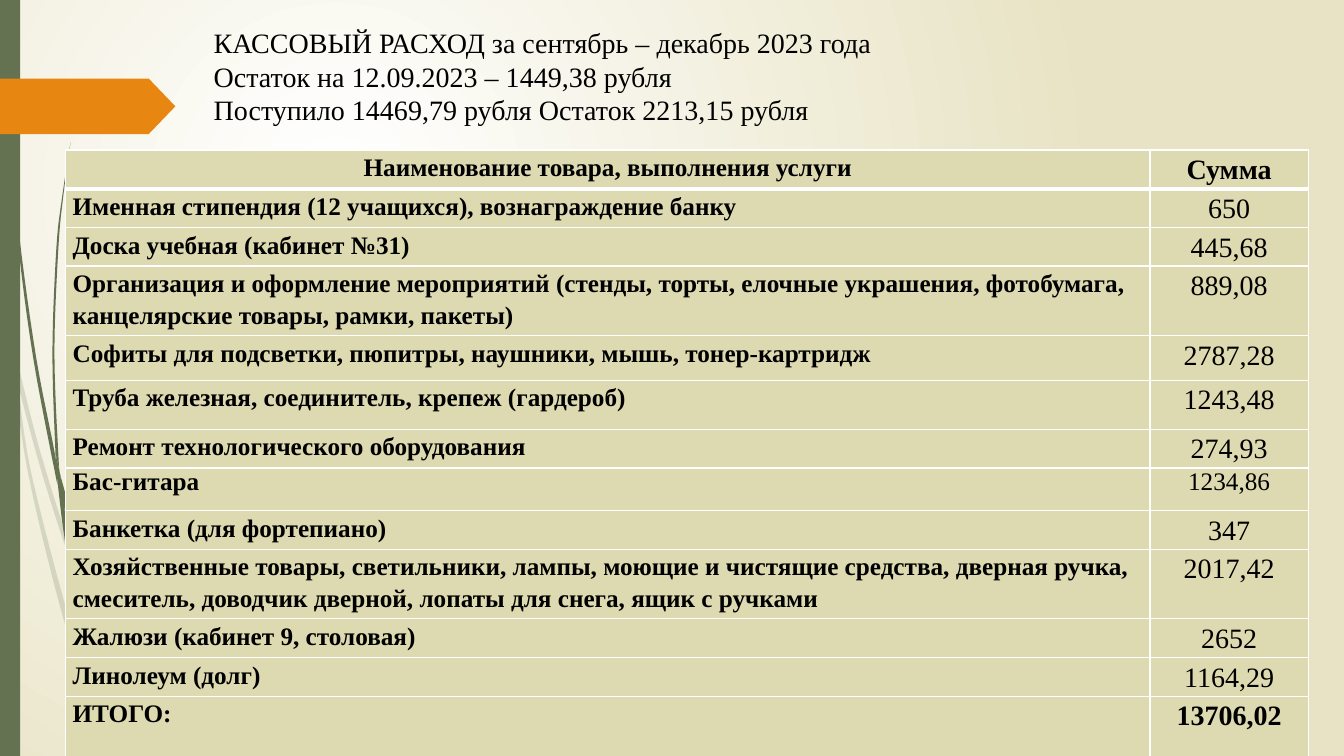
from dataclasses import dataclass

from lxml import etree
from pptx import Presentation
from pptx import util as u
from pptx.dml.color import RGBColor
from pptx.enum import shapes, text
from pptx.oxml import ns

HEADING = [
    "КАССОВЫЙ РАСХОД за сентябрь – декабрь 2023 года",
    "Остаток на 12.09.2023 – 1449,38 рубля",
    "Поступило 14469,79 рубля Остаток 2213,15 рубля",
]
EXPENSES = [
    ("Наименование товара, выполнения услуги", "Сумма", 0.91),
    ("Именная стипендия (12 учащихся), вознаграждение банку", "650", 0.91),
    ("Доска учебная (кабинет №31)", "445,68", 0.91),
    ("Организация и оформление мероприятий (стенды, торты, елочные украшения, "
     "фотобумага, канцелярские товары, рамки, пакеты)", "889,08", 1.62),
    ("Софиты для подсветки, пюпитры, наушники, мышь, тонер-картридж", "2787,28", 1.12),
    ("Труба железная, соединитель, крепеж (гардероб)", "1243,48", 1.24),
    ("Ремонт технологического оборудования", "274,93", 0.91),
    ("Бас-гитара", "1234,86", 1.07),
    ("Банкетка (для фортепиано)", "347", 0.91),
    ("Хозяйственные товары, светильники, лампы, моющие и чистящие средства, "
     "дверная ручка, смеситель, доводчик дверной, лопаты для снега, ящик с ручками",
     "2017,42", 1.62),
    ("Жалюзи (кабинет 9, столовая)", "2652", 0.91),
    ("Линолеум (долг)", "1164,29", 0.91),
    ("ИТОГО:", "13706,02", 1.63),
]
COMPACT_ROW = 7
COLUMN_WIDTHS = (27.33, 3.99)

PALE_STEMS = [
    ([(0, 2.99), (0.1, 3.44), (0.11, 3.5)], [(0, 2.82), (0.09, 3.22), (0.11, 3.5)]),
    ([(0.14, 3.45), (0.17, 3.76), (0.36, 4.5), (0.58, 5.22), (0.84, 5.99)],
     [(0.14, 3.45), (0.36, 4.34), (0.62, 5.2), (0.85, 5.86)]),
    ([(0.88, 6.1), (1.23, 6.94), (1.5, 7.5)],
     [(0.88, 5.96), (1.27, 6.92), (1.55, 7.5)]),
    ([(0.11, 3.5), (0.28, 4.7), (0.65, 6.21), (0.92, 6.93), (1.14, 7.5)],
     [(0.11, 3.5), (0.17, 3.76), (0.31, 4.69), (0.7, 6.19), (0.93, 6.83),
      (1.05, 7.11), (1.24, 7.5)]),
    ([(0.84, 5.99), (0.87, 6.46), (0.93, 6.83), (1.05, 7.11)],
     [(0.84, 5.99), (0.88, 6.1), (0.91, 6.46), (1.05, 7.11)]),
    ([(0.85, 5.86), (1.07, 4.61), (1.58, 3.48), (2.28, 2.44), (3.12, 1.53)],
     [(0.88, 5.96), (1.1, 4.62), (1.6, 3.49), (2.29, 2.45), (3.12, 1.54)]),
]
DARK_STEMS = [
    ([(0.03, 0), (0.04, 0.48), (0.07, 1.1), (0.17, 2.33), (0.33, 3.55), (0.57, 4.81)],
     [(0.04, 0), (0.05, 0.48), (0.08, 1.09), (0.19, 2.32), (0.36, 3.55),
      (0.55, 4.53), (0.57, 4.81)]),
    ([(0.6, 4.72), (0.64, 5.05), (0.88, 5.92), (1.06, 6.45)],
     [(0.6, 4.72), (0.93, 5.9), (1.06, 6.31), (1.1, 6.41)]),
    ([(1.11, 6.56), (1.32, 7.08), (1.52, 7.5)],
     [(1.1, 6.41), (1.13, 6.49), (1.36, 7.06), (1.57, 7.5)]),
    ([(0.55, 4.49), (0.57, 4.77), (0.68, 5.57), (0.93, 6.59), (1.17, 7.22), (1.27, 7.5)],
     [(0.6, 4.72), (0.64, 5.05), (0.72, 5.56), (0.98, 6.57), (1.1, 6.91),
      (1.22, 7.19), (1.36, 7.5)]),
    ([(0.7, 1.41), (0.62, 1.93), (0.56, 2.45), (0.52, 3.49), (0.55, 4.49)],
     [(0.7, 1.41), (0.63, 1.93), (0.58, 2.45), (0.54, 3.49), (0.58, 4.53), (0.6, 4.72)]),
    ([(1.06, 6.45), (1.1, 6.91), (1.22, 7.19)],
     [(1.06, 6.31), (1.1, 6.41), (1.11, 6.56), (1.21, 7.16)]),
    ([(1.06, 6.31), (1.22, 5.51), (1.56, 4.74), (2.04, 4.05), (2.6, 3.44)],
     [(1.1, 6.41), (1.25, 5.52), (1.58, 4.76), (2.05, 4.06), (2.61, 3.44)]),
]


@dataclass(frozen=True)
class Theme:
    font: str = "Times New Roman"
    ink: str = "000000"
    green: str = "647252"
    orange: str = "E78712"
    cell: str = "DDD9B0"
    border: str = "FFFFFF"
    glow: str = "FFFFFF"
    sand: str = "E8E3C4"
    large: int = 20
    normal: int = 18


THEME = Theme()


def write(para, wording, size=THEME.normal, bold=False, align=text.PP_ALIGN.LEFT, spacing=1.0):
    para.alignment = align
    para.line_spacing = spacing
    span = para.add_run()
    span.text = wording
    span.font.name = THEME.font
    span.font.size = u.Pt(size)
    span.font.bold = bold
    span.font.color.rgb = RGBColor.from_string(THEME.ink)


def paint(shape, color, opacity=100):
    shape.shadow.inherit = False
    shape.fill.solid()
    shape.fill.fore_color.rgb = RGBColor.from_string(color)
    shape.line.fill.background()
    if opacity < 100:
        tone = shape.fill._xPr.find(".//" + ns.qn("a:srgbClr"))
        etree.SubElement(tone, ns.qn("a:alpha"), val=str(opacity * 1000))


def smooth(points, steps=6):
    padded = [points[0], *points, points[-1]]
    curve = []
    for a, b, c, d in zip(padded, padded[1:], padded[2:], padded[3:]):
        for step in range(steps):
            t = step / steps
            curve.append(tuple(
                q + t / 2 * (r - p + t * (2 * p - 5 * q + 4 * r - s + t * (3 * (q - r) + s - p)))
                for p, q, r, s in zip(a, b, c, d)))
    return curve + [points[-1]]


def draw_stems(page, stems, opacity):
    units = 10000
    for left, right in stems:
        outline = [(round(x * units), round(y * units))
                   for x, y in smooth(left) + smooth(right)[::-1]]
        builder = page.shapes.build_freeform(*outline[0], scale=u.Cm(2.54) / units)
        builder.add_line_segments(outline[1:], close=True)
        paint(builder.convert_to_shape(), THEME.green, opacity)


def draw_background(page):
    fill = page.background.fill
    fill.gradient()
    for stop, color in zip(fill.gradient_stops, (THEME.glow, THEME.sand)):
        stop.color.rgb = RGBColor.from_string(color)
    gradient = page.background._cSld.find(".//" + ns.qn("a:gradFill"))
    linear = gradient.find(ns.qn("a:lin"))
    circle = etree.Element(ns.qn("a:path"), path="circle")
    etree.SubElement(circle, ns.qn("a:fillToRect"), l="50000", t="50000", r="100000", b="100000")
    gradient.replace(linear, circle)


def set_borders(cell, **widths):
    properties = cell._tc.get_or_add_tcPr()
    for index, side in enumerate("LRTB"):
        line = etree.Element(ns.qn("a:ln" + side), w=str(u.Pt(widths.get(side, 1))))
        solid = etree.SubElement(line, ns.qn("a:solidFill"))
        etree.SubElement(solid, ns.qn("a:srgbClr"), val=THEME.border)
        properties.insert(index, line)


def draw_table(page):
    frame = page.shapes.add_table(len(EXPENSES), 2, u.Cm(1.65), u.Cm(3.78),
                                  u.Cm(sum(COLUMN_WIDTHS)),
                                  u.Cm(sum(height for *_, height in EXPENSES)))
    table = frame.table
    for column, width in zip(table.columns, COLUMN_WIDTHS):
        column.width = u.Cm(width)
    for index, (*wordings, height) in enumerate(EXPENSES):
        table.rows[index].height = u.Cm(height)
        header, total = index == 0, index == len(EXPENSES) - 1
        compact = index == COMPACT_ROW
        for position, wording in enumerate(wordings):
            cell = table.cell(index, position)
            cell.margin_left = cell.margin_right = u.Cm(0.18)
            cell.margin_top = cell.margin_bottom = 0
            cell.fill.solid()
            cell.fill.fore_color.rgb = RGBColor.from_string(THEME.cell)
            set_borders(cell, B=3 if header else 1, T=3 if index == 1 else 1)
            amount = position == 1
            write(cell.text_frame.paragraphs[0], wording,
                  size=THEME.large if amount and not compact else THEME.normal,
                  bold=not amount or header or total,
                  align=text.PP_ALIGN.CENTER if amount or header else text.PP_ALIGN.LEFT,
                  spacing=1.0 if compact else 1.15)


def draw_heading(page):
    box = page.shapes.title
    box.left, box.top, box.width, box.height = map(u.Cm, (5.13, 0.51, 24.18, 2.82))
    frame = box.text_frame
    frame.word_wrap = True
    frame.auto_size = text.MSO_AUTO_SIZE.SHAPE_TO_FIT_TEXT
    frame.vertical_anchor = text.MSO_ANCHOR.MIDDLE
    for index, wording in enumerate(HEADING):
        para = frame.add_paragraph() if index else frame.paragraphs[0]
        write(para, wording, size=THEME.large)


def main():
    deck = Presentation()
    deck.slide_width, deck.slide_height = u.Cm(33.87), u.Cm(19.05)
    page = deck.slides.add_slide(deck.slide_layouts[5])
    draw_background(page)
    draw_stems(page, PALE_STEMS, opacity=20)
    draw_stems(page, DARK_STEMS, opacity=100)
    rail = page.shapes.add_shape(shapes.MSO_SHAPE.RECTANGLE, 0, 0, u.Cm(0.51), deck.slide_height)
    paint(rail, THEME.green)
    pointer = page.shapes.add_shape(shapes.MSO_SHAPE.PENTAGON, 0, u.Cm(1.98), u.Cm(4.42), u.Cm(1.4))
    pointer.adjustments[0] = 0.48
    paint(pointer, THEME.orange)
    draw_table(page)
    draw_heading(page)
    deck.save("out.pptx")


if __name__ == "__main__":
    main()
